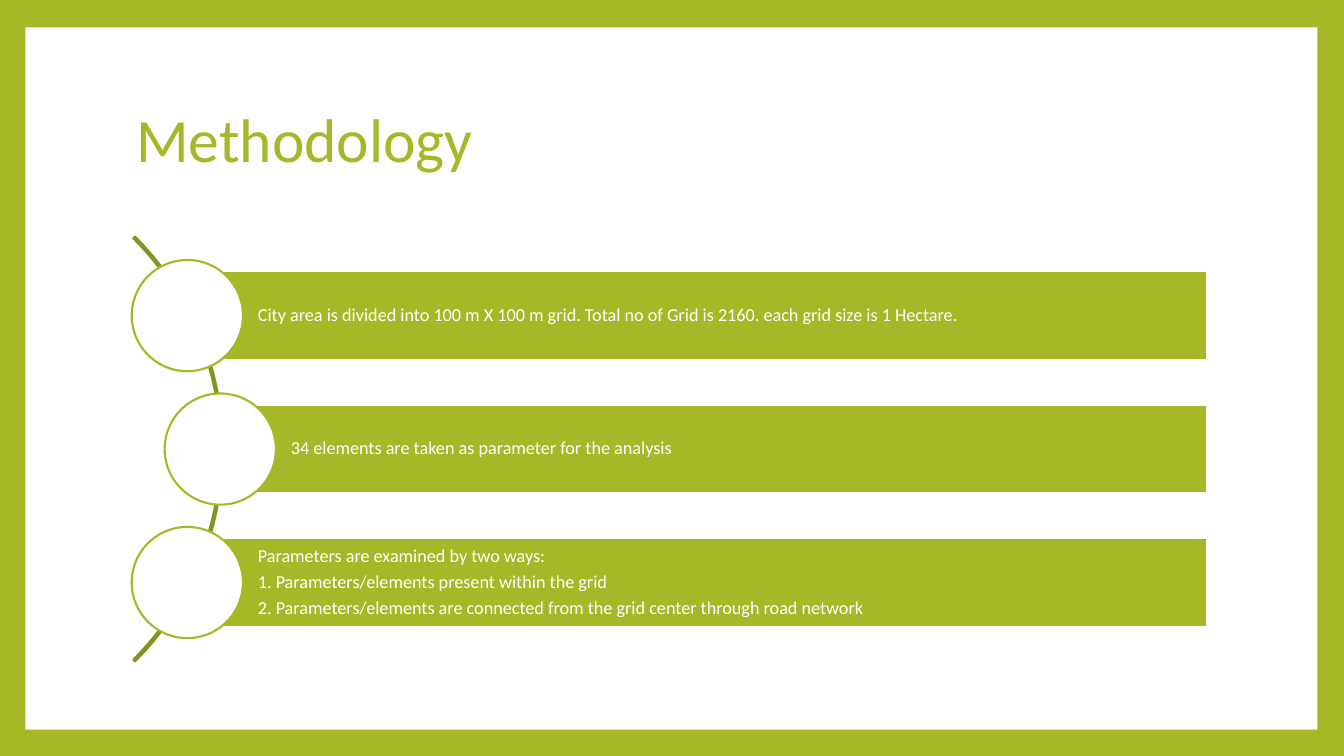
from pptx import Presentation
from pptx.dml.color import RGBColor
from pptx.enum.shapes import MSO_SHAPE
from pptx.enum.text import MSO_ANCHOR, PP_ALIGN
from pptx.util import Cm, Pt

GREEN = RGBColor(0xA6, 0xB7, 0x27)
DARK_GREEN = RGBColor(0x85, 0x93, 0x1F)
WHITE = RGBColor(0xFF, 0xFF, 0xFF)

FRAME_BOX = (0.64, 0.69, 32.56, 17.7)
TITLE_BOX = (3.18, 1.7, 27.43, 3.76)
STEPS_BOX = (3.18, 5.71, 27.25, 11.21)

# Each step: offset of its circle centre from the box's left edge, and its lines
STEPS = [
    (1.54, ["City area is divided into 100 m X 100 m grid. "
            "Total no of Grid is 2160. each grid size is 1 Hectare."]),
    (2.37, ["34 elements are taken as parameter for the analysis"]),
    (1.54, ["Parameters are examined by two ways:",
            "1. Parameters/elements present within the grid",
            "2. Parameters/elements are connected from the grid center "
            "through road network"]),
]

TITLE_FORMAT = {"size": Pt(44), "name": "Calibri", "bold": False}
STEP_FORMAT = {"size": Pt(13), "name": "Calibri"}
TITLE_PARAGRAPH = {"alignment": PP_ALIGN.LEFT, "line_spacing": 0.9}
STEP_PARAGRAPH = {"alignment": PP_ALIGN.LEFT, "line_spacing": 0.9,
                  "space_after": Pt(4.3)}
STEP_FRAME = {"word_wrap": True, "vertical_anchor": MSO_ANCHOR.MIDDLE,
              "margin_left": Cm(1.78), "margin_right": Cm(0.1),
              "margin_top": Cm(0.1), "margin_bottom": Cm(0.1)}


def apply_format(target, values):
    for name, value in values.items():
        setattr(target, name, value)


def format_paragraph(paragraph, layout, font, color):
    apply_format(paragraph, layout)
    apply_format(paragraph.font, font)
    paragraph.font.color.rgb = color


def add_preset(slide, preset, box, fill=None, line=None):
    shape = slide.shapes.add_shape(preset, *(Cm(length) for length in box))
    shape.shadow.inherit = False
    if fill is None:
        shape.fill.background()
    else:
        shape.fill.solid()
        shape.fill.fore_color.rgb = fill
    if line is None:
        shape.line.fill.background()
    else:
        shape.line.color.rgb = line
        shape.line.width = Pt(1.5)
    return shape


def build_frame(slide, box):
    """Green background with a white panel behind the title."""
    slide.background.fill.solid()
    slide.background.fill.fore_color.rgb = GREEN
    panel = add_preset(slide, MSO_SHAPE.RECTANGLE, box, fill=WHITE)
    slide.shapes.title.element.addprevious(panel.element)


def build_title(slide, box, text):
    title = slide.shapes.title
    title.left, title.top, title.width, title.height = map(Cm, box)
    title.text_frame.text = text
    title.text_frame.vertical_anchor = MSO_ANCHOR.MIDDLE
    format_paragraph(title.text_frame.paragraphs[0],
                     TITLE_PARAGRAPH, TITLE_FORMAT, GREEN)


def build_steps(slide, box, steps):
    """Bars with circles at their left ends, strung along a curve."""
    left, top, width, height = box
    bar_height = 0.2 * height
    circle_size = 0.25 * height

    # Curve through the circles
    diameter = 1.35 * height
    curve_left = left + 2.44 - diameter
    curve_top = top + (height - diameter) / 2
    curve = add_preset(slide, MSO_SHAPE.BLOCK_ARC,
                       (curve_left, curve_top, diameter, diameter),
                       line=DARK_GREEN)
    for index, value in enumerate((189, 27, 0.004)):
        curve.adjustments[index] = value

    for index, (offset, lines) in enumerate(steps):
        center_x = left + offset
        center_y = top + (0.2 + 0.3 * index) * height

        # Bar with the step's text
        bar = add_preset(slide, MSO_SHAPE.RECTANGLE,
                         (center_x, center_y - bar_height / 2,
                          width - offset, bar_height), GREEN, WHITE)
        apply_format(bar.text_frame, STEP_FRAME)
        bar.text_frame.text = "\n".join(lines)
        for paragraph in bar.text_frame.paragraphs:
            format_paragraph(paragraph, STEP_PARAGRAPH, STEP_FORMAT, WHITE)

        # Circle over the bar's left end
        add_preset(slide, MSO_SHAPE.OVAL,
                   (center_x - circle_size / 2, center_y - circle_size / 2,
                    circle_size, circle_size), WHITE, GREEN)


def main():
    presentation = Presentation()
    presentation.slide_width = Cm(33.87)
    presentation.slide_height = Cm(19.05)
    slide = presentation.slides.add_slide(presentation.slide_layouts[5])
    build_frame(slide, FRAME_BOX)
    build_title(slide, TITLE_BOX, "Methodology")
    build_steps(slide, STEPS_BOX, STEPS)
    presentation.save("out.pptx")


if __name__ == "__main__":
    main()
